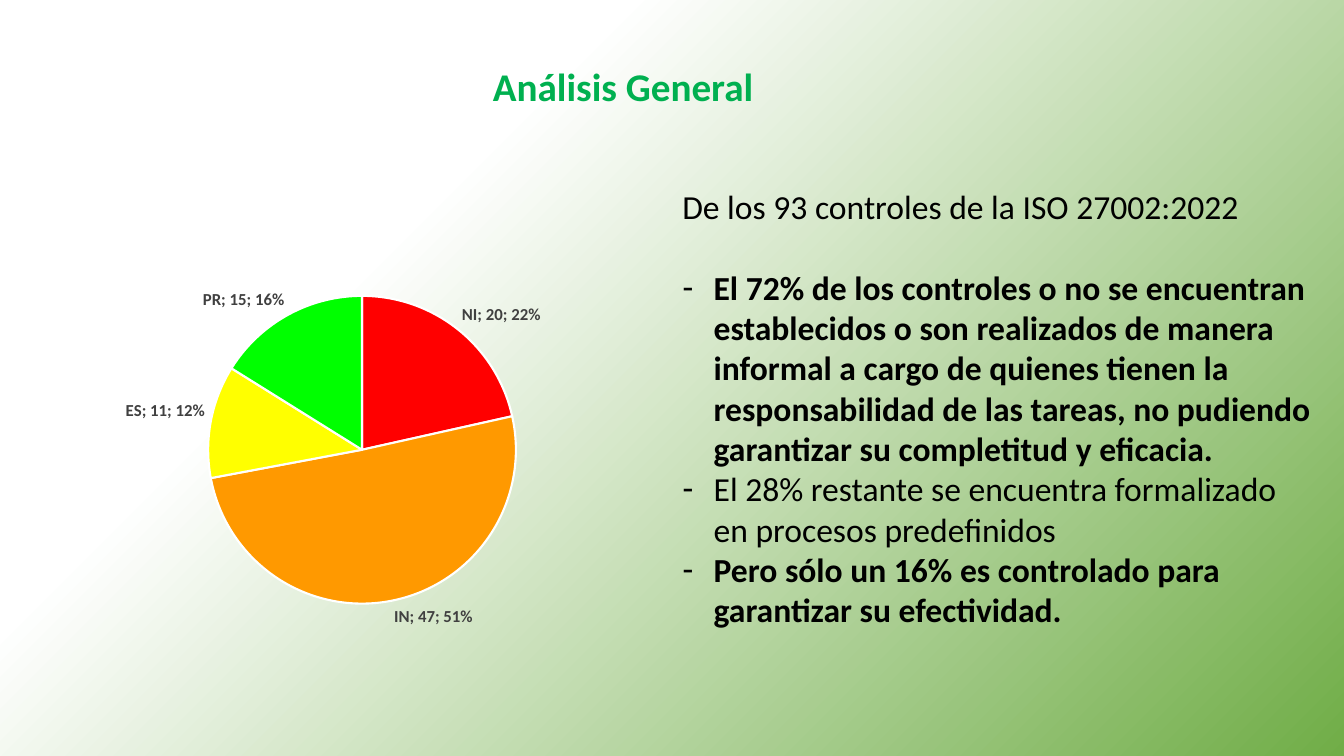
from copy import deepcopy
from dataclasses import dataclass

from lxml import etree
from pptx import Presentation
from pptx.chart.data import CategoryChartData
from pptx.dml.color import RGBColor
from pptx.enum.chart import XL_CHART_TYPE, XL_LABEL_POSITION
from pptx.enum.text import MSO_ANCHOR, MSO_AUTO_SIZE, PP_ALIGN
from pptx.oxml import parse_xml
from pptx.oxml.ns import nsdecls, qn
from pptx.util import Cm, Pt

PIE = XL_CHART_TYPE.PIE
OUTSIDE_END = XL_LABEL_POSITION.OUTSIDE_END
TOP = MSO_ANCHOR.TOP
FIT_SHAPE = MSO_AUTO_SIZE.SHAPE_TO_FIT_TEXT
LEFT = PP_ALIGN.LEFT

TITLE = "Análisis General"
INTRO = "De los 93 controles de la ISO 27002:2022"
FINDINGS = [  # text, bold
    ("El 72% de los controles o no se encuentran establecidos o son realizados "
     "de manera informal a cargo de quienes tienen la responsabilidad de las "
     "tareas, no pudiendo garantizar su completitud y eficacia.", True),
    ("El 28% restante se encuentra formalizado en procesos predefinidos", False),
    ("Pero sólo un 16% es controlado para garantizar su efectividad.", True),
]
CONTROLS = [  # status, count, colour
    ("NI", 20, "FF0000"),
    ("IN", 47, "FF9900"),
    ("ES", 11, "FFFF00"),
    ("PR", 15, "00FF00"),
    ("OP", 0, "5B9BD5"),
]

# left, top, width, height in centimetres
TITLE_BOX = (12.17, 1.45, 7.16, 1.45)
BODY_BOX = (16.94, 4.55, 16.46, 11.53)
CHART_BOX = (1.14, 6.68, 15.21, 9.5)
PIE_AREA = {"x": 0.27, "y": 0.08, "w": 0.51, "h": 0.82}  # shares of the chart


@dataclass(frozen=True)
class Theme:
    font: str = "Calibri"
    title: str = "00B050"
    text: str = "000000"
    label: str = "404040"
    border: str = "FFFFFF"
    gradient: tuple = ((0, "FFFFFF"), (0.3, "FFFFFF"), (1, "70AD47"))
    title_size: int = 28
    body_size: int = 24
    label_size: int = 12


THEME = Theme()


def set_font(font, size, color, bold):
    font.name = THEME.font
    font.size = Pt(size)
    font.bold = bold
    font.color.rgb = RGBColor.from_string(color)


def write(para, text, size=THEME.body_size, color=THEME.text, bold=False,
          bullet=None, hang=0.79, before=0):
    """Fill a paragraph; hang is the bullet indent in cm, before is in points."""
    properties = para._p.get_or_add_pPr()
    indent = Cm(hang) if bullet else 0
    properties.set("marL", str(indent))
    properties.set("indent", str(-indent))
    if bullet:
        etree.SubElement(properties, qn("a:buFontTx"))
        etree.SubElement(properties, qn("a:buChar"), char=bullet)
    else:
        etree.SubElement(properties, qn("a:buNone"))
    para.alignment = LEFT
    para.space_before = Pt(before)
    span = para.add_run()
    span.text = text
    set_font(span.font, size, color, bold)


def place(box, area, wrap):
    box.left, box.top, box.width, box.height = map(Cm, area)
    frame = box.text_frame
    frame.word_wrap = wrap
    frame.auto_size = FIT_SHAPE
    frame.vertical_anchor = TOP
    return frame


def paint_background(page):
    fill = page.background.fill
    fill.gradient()
    fill.gradient_angle = 315  # counter-clockwise: runs to the lower right
    first = fill.gradient_stops[0]._gs
    first.addnext(deepcopy(first))
    for stop, (position, color) in zip(fill.gradient_stops, THEME.gradient):
        stop.position = position
        stop.color.rgb = RGBColor.from_string(color)


def add_pie(page):
    data = CategoryChartData()
    data.categories = [status for status, _, _ in CONTROLS]
    data.add_series("Series 1", [count for _, count, _ in CONTROLS])
    chart = page.shapes.add_chart(PIE, *map(Cm, CHART_BOX), data).chart
    chart.has_legend = False
    chart.has_title = False
    set_font(chart.font, 10, THEME.text, False)

    plot = chart.plots[0]
    plot.vary_by_categories = True
    series = plot.series[0]
    labels = series.data_labels
    labels.show_category_name = True
    labels.show_value = True
    labels.show_percentage = True
    labels.position = OUTSIDE_END
    set_font(labels.font, THEME.label_size, THEME.label, True)

    for index, (_, count, color) in enumerate(CONTROLS):
        form = series.points[index].format
        form.fill.solid()
        form.fill.fore_color.rgb = RGBColor.from_string(color)
        form.line.color.rgb = RGBColor.from_string(THEME.border)
        form.line.width = Pt(1.5)
        if not count:  # an empty slice carries no label
            labels._element.insert(0, parse_xml(
                f'<c:dLbl {nsdecls("c")}><c:idx val="{index}"/>'
                '<c:delete val="1"/></c:dLbl>'))

    plot_area = chart._chartSpace.chart.plotArea
    for old in plot_area.findall(qn("c:layout")):
        plot_area.remove(old)
    edges = "".join(f'<c:{key} val="{share}"/>' for key, share in PIE_AREA.items())
    plot_area.insert(0, parse_xml(
        f'<c:layout {nsdecls("c")}><c:manualLayout><c:layoutTarget val="inner"/>'
        '<c:xMode val="edge"/><c:yMode val="edge"/>'
        f'{edges}</c:manualLayout></c:layout>'))


def main():
    deck = Presentation()
    deck.slide_width, deck.slide_height = Cm(33.87), Cm(19.05)
    page = deck.slides.add_slide(deck.slide_layouts[1])
    paint_background(page)

    title = place(page.shapes.title, TITLE_BOX, wrap=False)
    write(title.paragraphs[0], TITLE, size=THEME.title_size,
          color=THEME.title, bold=True)

    body = place(page.placeholders[1], BODY_BOX, wrap=True)
    write(body.paragraphs[0], INTRO)
    for index, (text, bold) in enumerate(FINDINGS):
        write(body.add_paragraph(), text, bold=bold, bullet="-",
              before=0 if index else 29)

    add_pie(page)
    deck.save("out.pptx")


if __name__ == "__main__":
    main()
